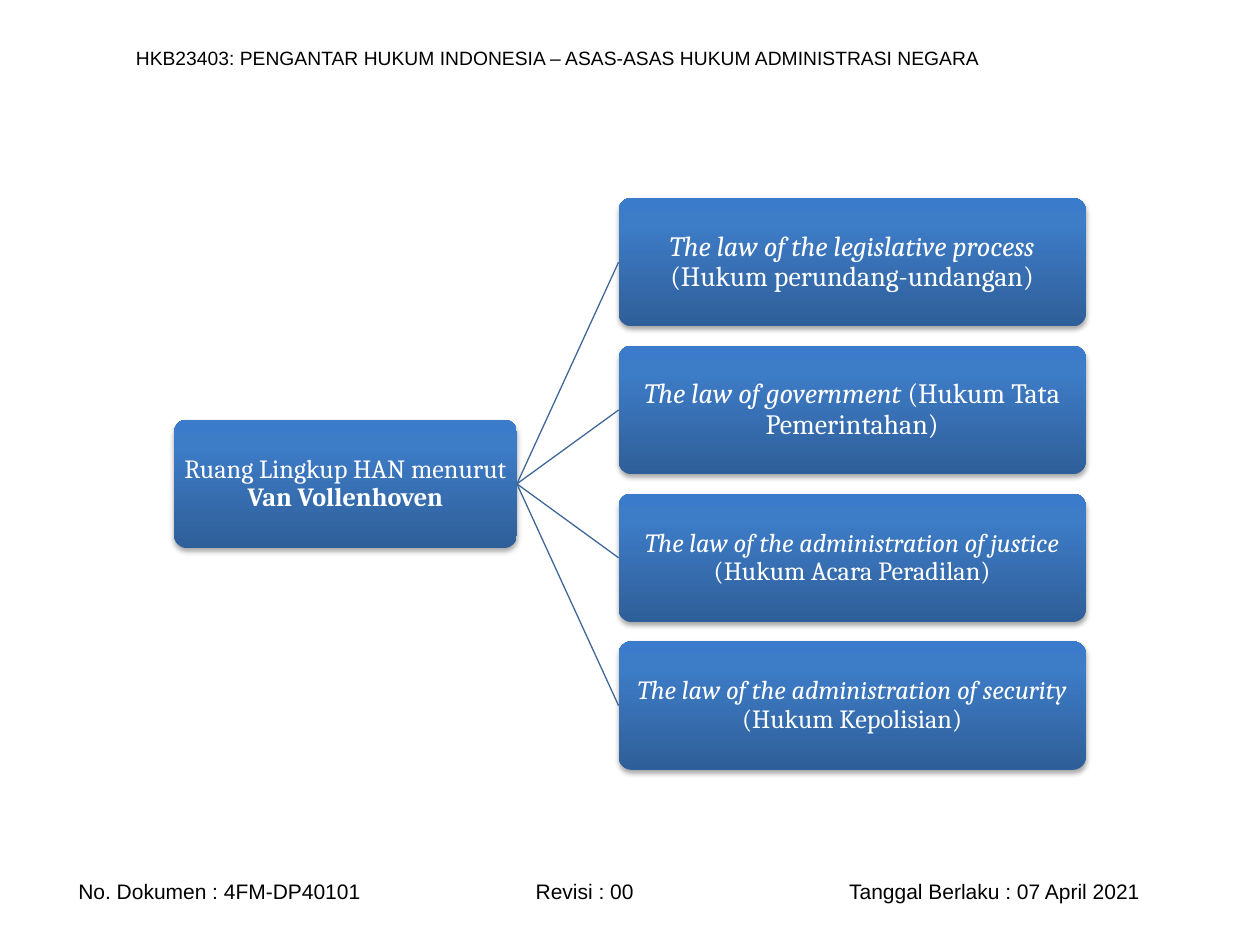
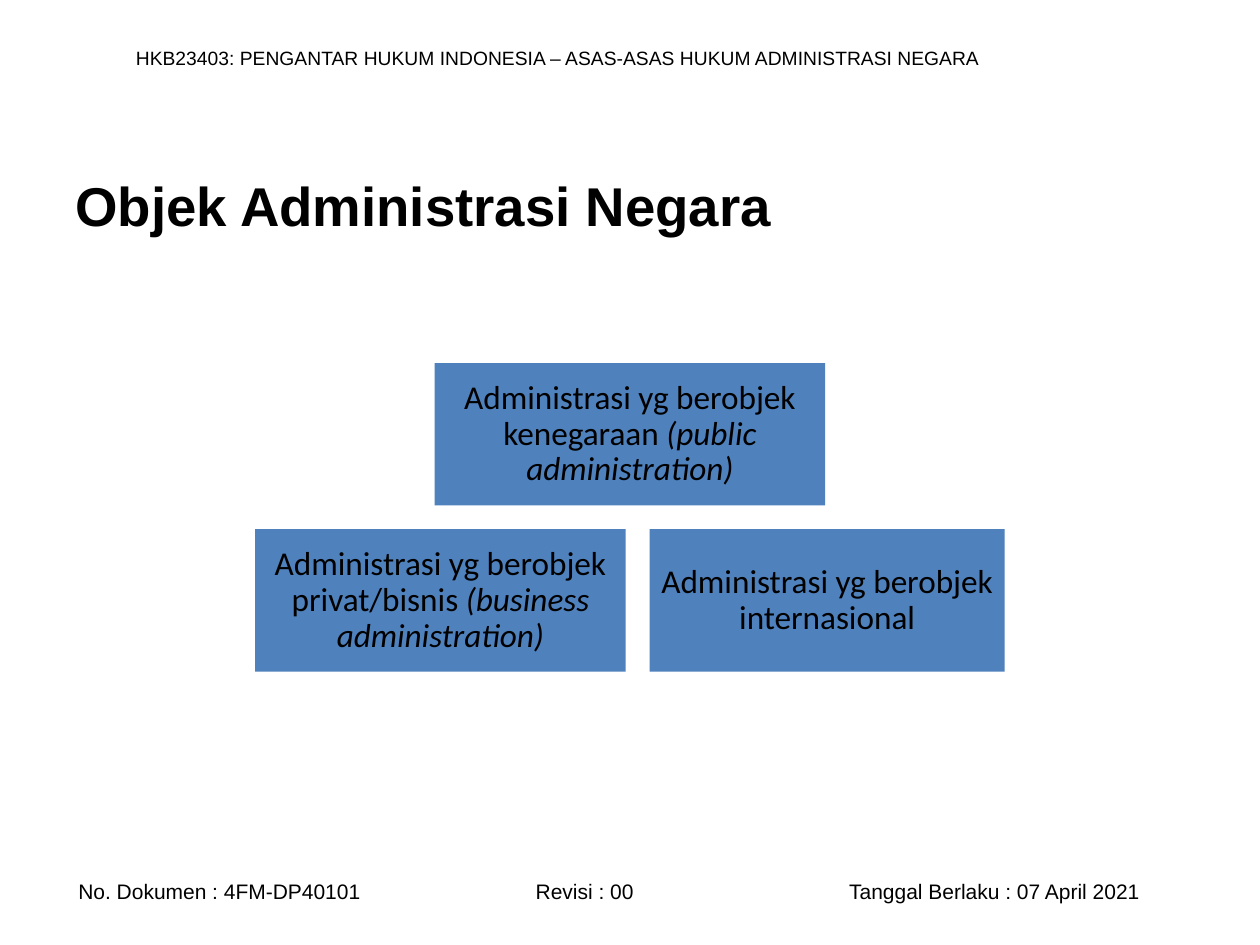
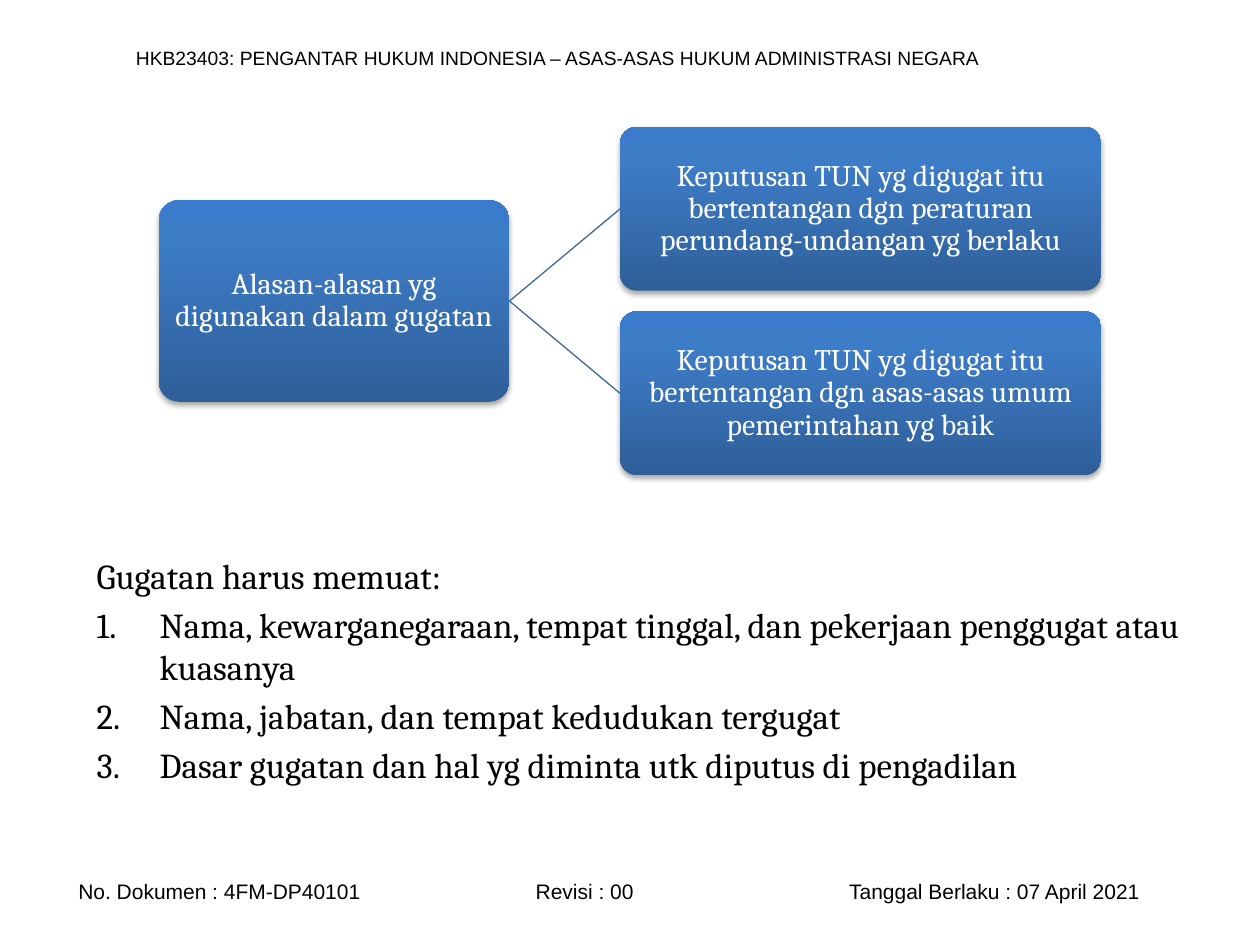
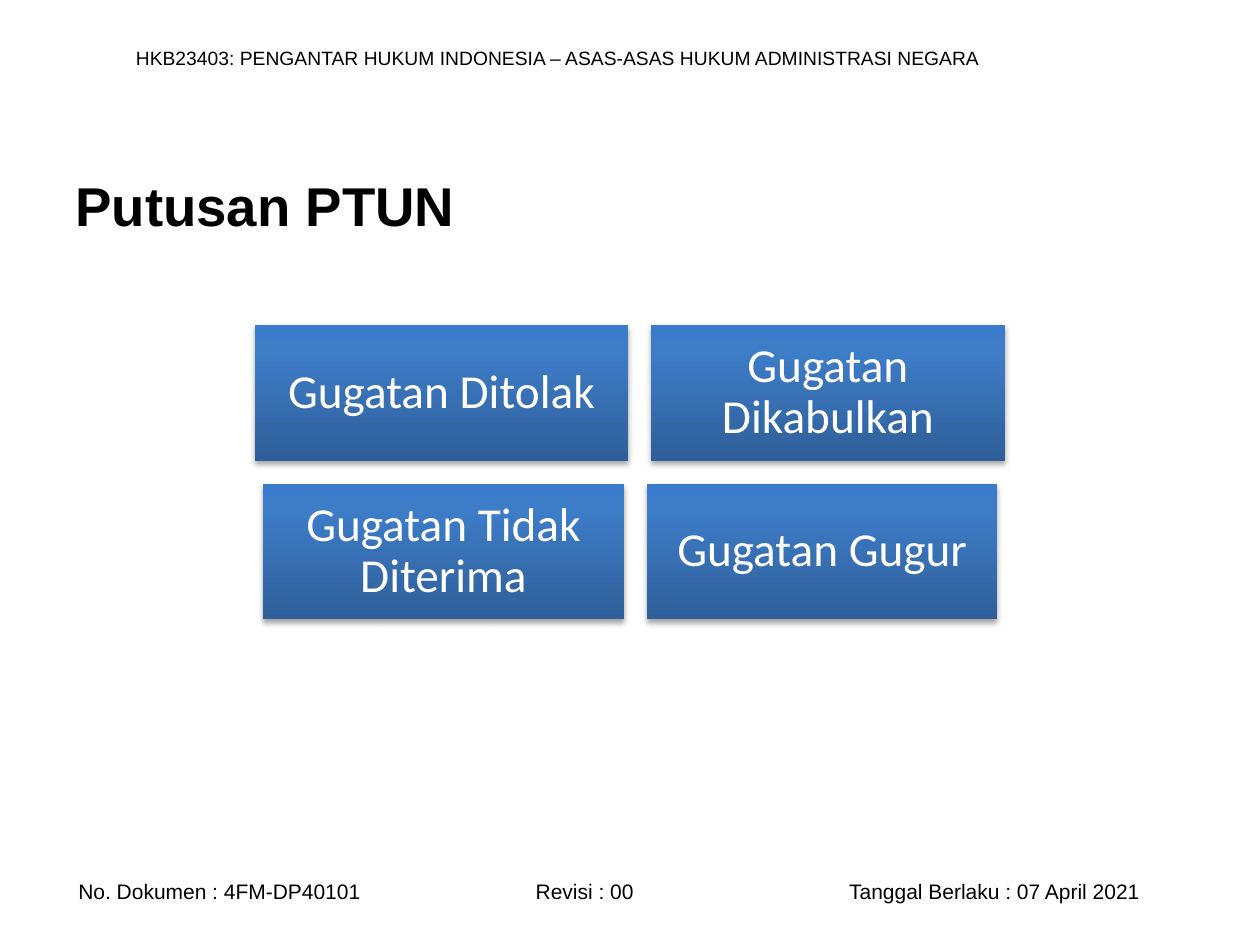
"""Builds four slides on administrative law with trees, box rows and a list."""
from dataclasses import dataclass

from pptx import Presentation
from pptx.dml.color import RGBColor
from pptx.enum.shapes import MSO_CONNECTOR, MSO_SHAPE
from pptx.enum.text import MSO_ANCHOR, PP_ALIGN
from pptx.oxml import parse_xml
from pptx.oxml.ns import nsdecls, qn
from pptx.oxml.xmlchemy import OxmlElement
from pptx.util import Cm, Pt


@dataclass(frozen=True)
class Theme:
    """Colours, fonts and type sizes shared by the slides."""
    black: str = "000000"
    white: str = "FFFFFF"
    flat_blue: str = "4F81BD"
    line_blue: str = "3F6797"
    gradient: tuple = ((0, "2F5F99"), (80, "3D7CC7"), (100, "3A7CCB"))
    heading_font: str = "Arial"
    tree_font: str = "Cambria"
    box_font: str = "Calibri"
    header_size: float = 11
    footer_size: float = 12
    title_size: float = 31.2
    list_size: float = 20
    reason_size: float = 17
    flat_box_size: float = 19
    ruling_size: float = 27


THEME = Theme()
SLIDE_WIDTH = 25.4
SLIDE_HEIGHT = 19.05
HEADER = "HKB23403: PENGANTAR HUKUM INDONESIA – ASAS-ASAS HUKUM ADMINISTRASI NEGARA"
FOOTER = "No. Dokumen : 4FM-DP40101\tRevisi : 00\tTanggal Berlaku : 07 April 2021"
FOOTER_TABS = (9.22, 15.54)


def add_run(paragraph, text, font, size, color=THEME.black, bold=False, italic=False):
    """Append one formatted run."""
    run = paragraph.add_run()
    run.text = text
    run.font.name = font
    run.font.size = Pt(size)
    run.font.bold = bold
    run.font.italic = italic
    run.font.color.rgb = RGBColor.from_string(color)


def add_text_box(slide, left, top, width, height, anchor=MSO_ANCHOR.MIDDLE):
    """Add a wrapping text box and return its text frame."""
    frame = slide.shapes.add_textbox(Cm(left), Cm(top), Cm(width), Cm(height)).text_frame
    frame.word_wrap = True
    frame.vertical_anchor = anchor
    return frame


def add_tabs(paragraph, positions):
    """Set left tab stops on a paragraph."""
    tabs = OxmlElement("a:tabLst")
    for position in positions:
        tab = OxmlElement("a:tab")
        tab.set("pos", str(Cm(position)))
        tab.set("algn", "l")
        tabs.append(tab)
    paragraph._p.get_or_add_pPr().append(tabs)


def add_framed_slide(presentation):
    """Add a blank slide carrying the running header and footer."""
    slide = presentation.slides.add_slide(presentation.slide_layouts[6])
    header = add_text_box(slide, 2.49, 0.79, 21.21, 0.74).paragraphs[0]
    header.alignment = PP_ALIGN.JUSTIFY
    add_run(header, HEADER, THEME.heading_font, THEME.header_size)
    frame = add_text_box(slide, 0.51, 17.58, 24, 0.76)
    frame.margin_left = Cm(1.07)
    footer = frame.paragraphs[0]
    add_tabs(footer, FOOTER_TABS)
    footer.alignment = PP_ALIGN.JUSTIFY
    add_run(footer, FOOTER, THEME.heading_font, THEME.footer_size)
    return slide


def add_title(slide, text):
    """Add the bold slide title."""
    paragraph = add_text_box(slide, 1.27, 2.54, 22.86, 3.18).paragraphs[0]
    add_run(paragraph, text, THEME.heading_font, THEME.title_size, bold=True)


def apply_gloss(shape):
    """Give a shape the vertical blue gradient and soft shadow."""
    stops = "".join(
        f'<a:gs pos="{position * 1000}"><a:srgbClr val="{color}"/></a:gs>'
        for position, color in THEME.gradient)
    properties = shape._element.spPr
    properties.find(qn("a:prstGeom")).addnext(parse_xml(
        f'<a:gradFill {nsdecls("a")} rotWithShape="1"><a:gsLst>{stops}</a:gsLst>'
        '<a:lin ang="16200000" scaled="0"/></a:gradFill>'))
    properties.find(qn("a:effectLst")).append(parse_xml(
        f'<a:outerShdw {nsdecls("a")} blurRad="40000" dist="23000" dir="5400000" '
        f'rotWithShape="0"><a:srgbClr val="{THEME.black}"><a:alpha val="35000"/>'
        '</a:srgbClr></a:outerShdw>'))


def add_box(slide, kind, bounds, runs, font, size, inset, glossy=True):
    """Add a filled box with centred text given as (text, style) runs."""
    shape = slide.shapes.add_shape(kind, *(Cm(value) for value in bounds))
    shape.shadow.inherit = False
    shape.line.fill.background()
    if glossy:
        apply_gloss(shape)
    else:
        shape.fill.solid()
        shape.fill.fore_color.rgb = RGBColor.from_string(THEME.flat_blue)
    frame = shape.text_frame
    frame.word_wrap = True
    frame.vertical_anchor = MSO_ANCHOR.MIDDLE
    frame.margin_left = frame.margin_right = Cm(inset)
    frame.margin_top = frame.margin_bottom = Cm(inset)
    paragraph = frame.paragraphs[0]
    paragraph.alignment = PP_ALIGN.CENTER
    paragraph.line_spacing = 0.9
    color = THEME.white if glossy else THEME.black
    for text, style in runs:
        add_run(paragraph, text, font, size, color, **style)
    return shape


def add_tree_node(slide, bounds, runs, size):
    """Add a rounded tree node."""
    node = add_box(slide, MSO_SHAPE.ROUNDED_RECTANGLE, bounds, runs,
                   THEME.tree_font, size, 0.03)
    node.adjustments[0] = 0.1
    return node


def add_branch(slide, root, leaf):
    """Join the right side of the root to the left side of a leaf."""
    branch = slide.shapes.add_connector(MSO_CONNECTOR.STRAIGHT, 0, 0, 0, 0)
    branch.begin_connect(root, 3)
    branch.end_connect(leaf, 1)
    branch.line.color.rgb = RGBColor.from_string(THEME.line_blue)
    branch.line.width = Pt(0.75)
    branch._element.spPr.append(OxmlElement("a:effectLst"))


def add_tree(slide, root_box, root, leaf_box, pitch, leaves):
    """Draw a root, centred on its evenly stacked leaves, and the branches."""
    root_left, root_width, root_height = root_box
    left, top, width, height = leaf_box
    middle = top + (pitch * (len(leaves) - 1) + height) / 2
    root_bounds = (root_left, middle - root_height / 2, root_width, root_height)
    root_node = add_tree_node(slide, root_bounds, *root)
    for index, leaf in enumerate(leaves):
        leaf_node = add_tree_node(slide, (left, top + index * pitch, width, height), *leaf)
        add_branch(slide, root_node, leaf_node)


def add_box_rows(slide, top, height, gap, rows, size, inset, glossy):
    """Draw rows of (width, runs) boxes, each row centred on the slide."""
    for index, row in enumerate(rows):
        row_width = sum(width for width, _ in row) + gap * (len(row) - 1)
        left = (SLIDE_WIDTH - row_width) / 2
        for width, runs in row:
            bounds = (left, top + index * (height + gap), width, height)
            add_box(slide, MSO_SHAPE.RECTANGLE, bounds, runs, THEME.box_font,
                    size, inset, glossy)
            left += width + gap


def add_numbered_list(slide, bounds, lead, items):
    """Add a lead line followed by numbered items."""
    frame = add_text_box(slide, *bounds, anchor=MSO_ANCHOR.TOP)
    add_run(frame.paragraphs[0], lead, THEME.tree_font, THEME.list_size)
    for item in items:
        paragraph = frame.add_paragraph()
        properties = paragraph._p.get_or_add_pPr()
        properties.set("marL", str(Cm(1.27)))
        properties.set("indent", str(-Cm(1.27)))
        number = OxmlElement("a:buAutoNum")
        number.set("type", "arabicPeriod")
        properties.append(number)
        paragraph.space_before = Pt(THEME.list_size * 0.2)
        add_run(paragraph, item, THEME.tree_font, THEME.list_size)


def build_scope_slide(presentation):
    """Build the tree of the scope of administrative law."""
    slide = add_framed_slide(presentation)
    root = ([("Ruang Lingkup HAN menurut ", {}), ("Van Vollenhoven", {"bold": True})], 15)
    branches = (
        ("The law of the legislative process ", "(Hukum perundang-undangan)", 16),
        ("The law of government ", "(Hukum Tata Pemerintahan)", 16),
        ("The law of the administration of justice ", "(Hukum Acara Peradilan)", 15),
        ("The law of the administration of security ", "(Hukum Kepolisian)", 15),
    )
    leaves = [([(english, {"italic": True}), (local, {})], size)
              for english, local, size in branches]
    add_tree(slide, (3.51, 6.91, 2.59), root, (12.47, 3.99, 9.42, 2.59), 2.98, leaves)


def build_object_slide(presentation):
    """Build the slide on the objects of state administration."""
    slide = add_framed_slide(presentation)
    add_title(slide, "Objek Administrasi Negara")
    italic = {"italic": True}
    rows = (
        [(7.87, [("Administrasi yg berobjek kenegaraan ", {}),
                 ("(public administration)", italic)])],
        [(7.47, [("Administrasi yg berobjek privat/bisnis ", {}),
                 ("(business administration)", italic)]),
         (7.16, [("Administrasi yg berobjek internasional", {})])],
    )
    add_box_rows(slide, 7.32, 2.87, 0.48, rows, THEME.flat_box_size, 0.2, glossy=False)


def build_claim_slide(presentation):
    """Build the slide on the grounds and contents of a claim."""
    slide = add_framed_slide(presentation)
    reasons = (
        "Keputusan TUN yg digugat itu bertentangan dgn peraturan perundang-undangan yg berlaku",
        "Keputusan TUN yg digugat itu bertentangan dgn asas-asas umum pemerintahan yg baik",
    )
    root = ([("Alasan-alasan yg digunakan dalam gugatan", {})], THEME.reason_size)
    leaves = [([(reason, {})], THEME.reason_size) for reason in reasons]
    add_tree(slide, (3.2, 7.07, 4.06), root, (12.5, 2.56, 9.7, 3.3), 3.72, leaves)
    add_numbered_list(slide, (1.7, 11.05, 22.43, 5.31), "Gugatan harus memuat:", (
        "Nama, kewarganegaraan, tempat tinggal, dan pekerjaan penggugat atau kuasanya",
        "Nama, jabatan, dan tempat kedudukan tergugat",
        "Dasar gugatan dan hal yg diminta utk diputus di pengadilan",
    ))


def build_ruling_slide(presentation):
    """Build the slide on the rulings of the court."""
    slide = add_framed_slide(presentation)
    add_title(slide, "Putusan PTUN")
    rows = (
        [(7.52, [("Gugatan Ditolak", {})]), (7.14, [("Gugatan Dikabulkan", {})])],
        [(7.29, [("Gugatan Tidak Diterima", {})]), (7.06, [("Gugatan Gugur", {})])],
    )
    add_box_rows(slide, 6.55, 2.74, 0.46, rows, THEME.ruling_size, 0.28, glossy=True)


def main():
    """Build and save the presentation."""
    presentation = Presentation()
    presentation.slide_width = Cm(SLIDE_WIDTH)
    presentation.slide_height = Cm(SLIDE_HEIGHT)
    build_scope_slide(presentation)
    build_object_slide(presentation)
    build_claim_slide(presentation)
    build_ruling_slide(presentation)
    presentation.save("out.pptx")


if __name__ == "__main__":
    main()
